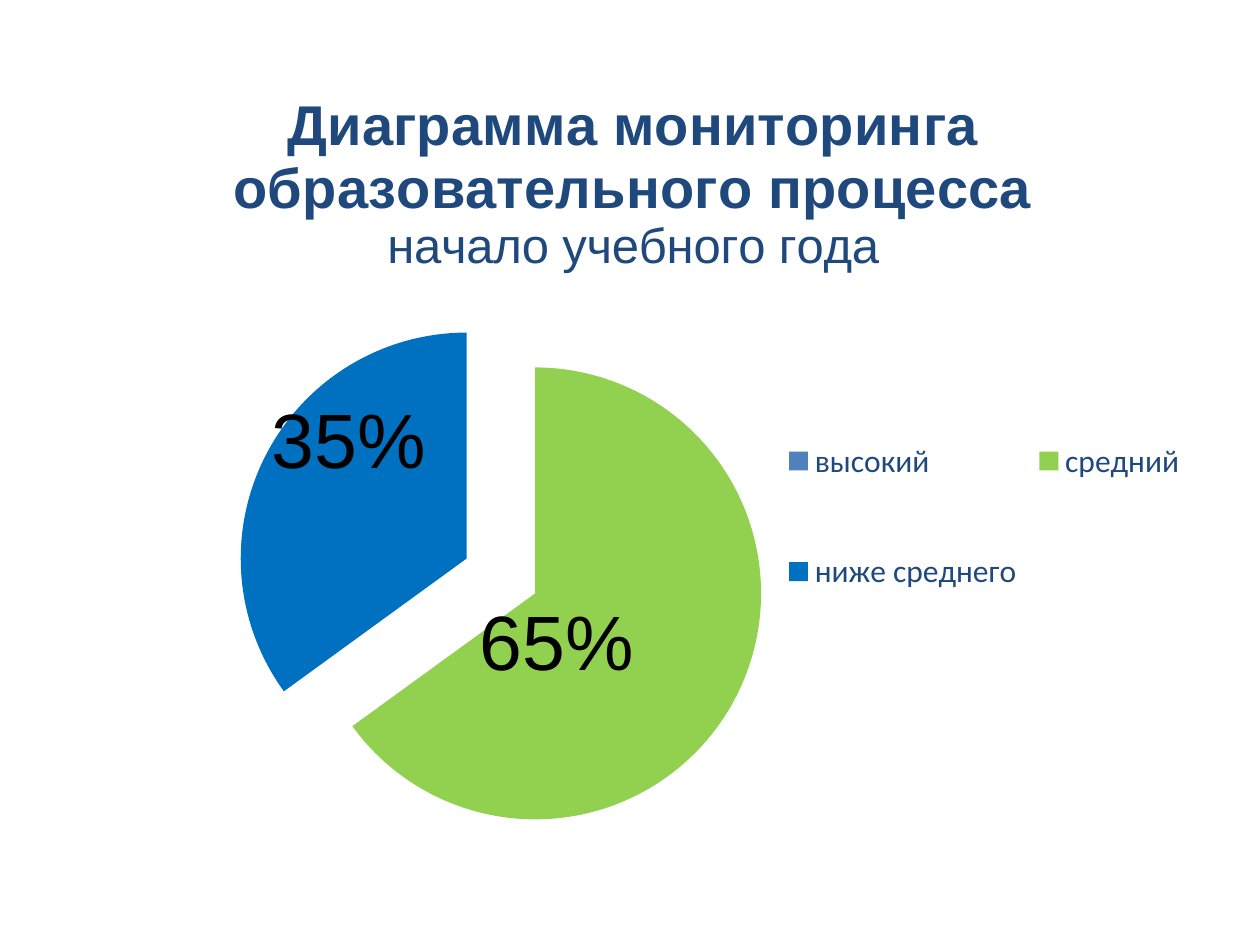
from lxml.etree import SubElement as Sub
from pptx import Presentation
from pptx.chart.data import CategoryChartData as Data
from pptx.dml.color import RGBColor
from pptx.enum.chart import XL_CHART_TYPE as Kind
from pptx.enum.chart import XL_LABEL_POSITION as Spot
from pptx.enum.chart import XL_LEGEND_POSITION as Side
from pptx.enum.text import PP_ALIGN as Align
from pptx.oxml.ns import qn
from pptx.util import Inches, Pt

NAVY = "1F497D"
LINES = [("Диаграмма мониторинга", 32, True),
         ("образовательного процесса", 32, True),
         ("начало учебного года", 28, False)]
PARTS = [("высокий", None, "4F81BD", None),
         ("средний", 0.65, "92D050", (-0.07, 0)),
         ("ниже среднего", 0.35, "0070C0", (-0.015, -0.08))]


def style(font, size, color, name, bold=False):
    """Set the size, colour, face and weight of a font."""
    font.size, font.name, font.bold = Pt(size), name, bold
    font.color.rgb = RGBColor.from_string(color)


def place(node, index, inner=False, **shares):
    """Give a chart part a manual layout in shares of the chart."""
    for old in node.findall(qn("c:layout")):
        node.remove(old)
    layout = Sub(node, qn("c:layout"))
    node.insert(index, layout)
    manual = Sub(layout, qn("c:manualLayout"))
    if inner:
        Sub(manual, qn("c:layoutTarget")).set("val", "inner")
    if "w" in shares:
        for mode in ("xMode", "yMode"):
            Sub(manual, qn("c:" + mode)).set("val", "edge")
    for key, share in shares.items():
        Sub(manual, qn("c:" + key)).set("val", str(share))


def add_title(chart):
    """Write the three centred lines of the chart title."""
    chart.has_title = True
    frame = chart.chart_title.text_frame
    for i, (text, size, bold) in enumerate(LINES):
        para = frame.paragraphs[0] if i == 0 else frame.add_paragraph()
        para.text = text
        para.alignment = Align.CENTER
        style(para.runs[0].font, size, NAVY, "Arial", bold)
    chart.chart_title.include_in_layout = False
    place(chart.chart_title._element, 1, x=0.143, y=0.035, w=0.71, h=0.23)


def add_legend(chart):
    """Put the legend to the right of the pie."""
    chart.has_legend = True
    legend = chart.legend
    legend.position = Side.RIGHT
    legend.include_in_layout = False
    style(legend.font, 18, NAVY, "Calibri")
    place(legend._element, 1, x=0.63, y=0.38, w=0.37, h=0.36)


def paint(series):
    """Colour, label and pull apart the slices."""
    for i, (_, value, color, shift) in enumerate(PARTS):
        point = series.points[i]
        point.format.fill.solid()
        point.format.fill.fore_color.rgb = RGBColor.from_string(color)
        if value:
            label = point.data_label
            style(label.font, 44, "000000", "Arial")
            label.position = Spot.CENTER
            place(label._dLbl, 1, x=shift[0], y=shift[1])
    burst = Sub(series._element, qn("c:explosion"))
    burst.set("val", "17")
    series._element.find(qn("c:tx")).addnext(burst)


def add_pie(slide, left, top, width, height):
    """Add the pie chart in the given box."""
    data = Data(number_format="0%")
    data.categories = [part[0] for part in PARTS]
    data.add_series("Series 1", [part[1] for part in PARTS])
    chart = slide.shapes.add_chart(Kind.PIE, left, top, width, height, data).chart
    style(chart.font, 18, "000000", "Calibri")
    add_title(chart)
    add_legend(chart)
    plot = chart.plots[0]
    plot.vary_by_categories = True
    paint(plot.series[0])
    area = chart._chartSpace.find(".//" + qn("c:plotArea"))
    place(area, 0, True, x=0.149, y=0.309, w=0.471, h=0.648)


def main():
    """Build and save the slide."""
    deck = Presentation()
    deck.slide_width, deck.slide_height = Inches(10), Inches(7.5)
    slide = deck.slides.add_slide(deck.slide_layouts[6])
    add_pie(slide, Inches(0.55), Inches(0.47), Inches(8.91), Inches(6.48))
    deck.save("out.pptx")


if __name__ == "__main__":
    main()
